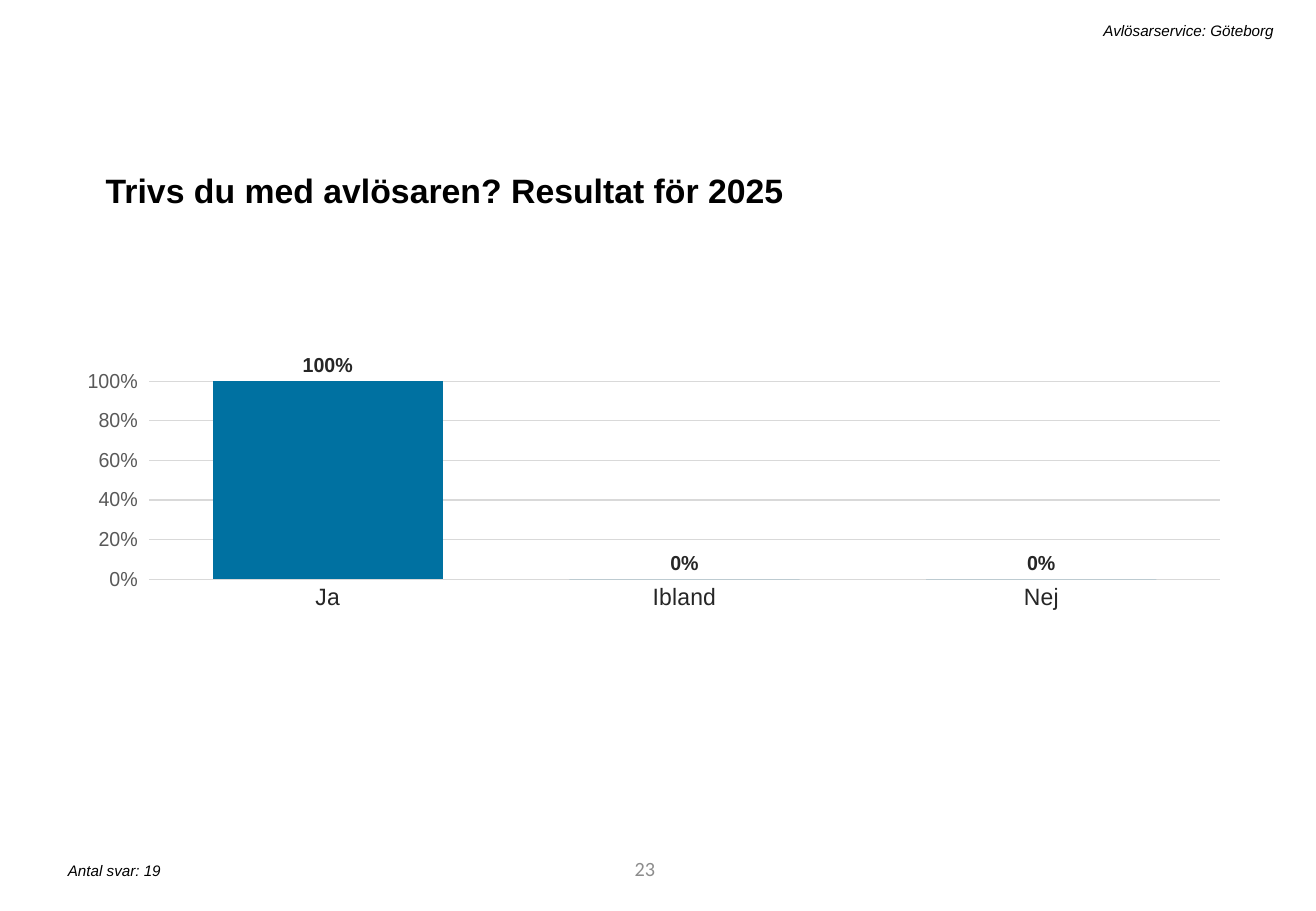
from dataclasses import dataclass

from lxml import etree
from pptx import Presentation
from pptx.chart.data import CategoryChartData
from pptx.dml.color import RGBColor
from pptx.enum.chart import XL_CHART_TYPE, XL_LABEL_POSITION, XL_TICK_MARK
from pptx.enum.text import MSO_ANCHOR, PP_ALIGN
from pptx.oxml.ns import qn
from pptx.util import Pt

COLUMNS = XL_CHART_TYPE.COLUMN_CLUSTERED
OUTSIDE_END = XL_LABEL_POSITION.OUTSIDE_END
TICK_NONE, TICK_OUT = XL_TICK_MARK.NONE, XL_TICK_MARK.OUTSIDE
TOP, MIDDLE = MSO_ANCHOR.TOP, MSO_ANCHOR.MIDDLE
LEFT, RIGHT = PP_ALIGN.LEFT, PP_ALIGN.RIGHT
EMU_PER_PX = 9144


@dataclass(frozen=True)
class Theme:
    font: str = "Arial"
    number_font: str = "Calibri"
    black: str = "000000"
    dark: str = "262626"
    axis: str = "595959"
    muted: str = "8C8C8C"
    grid: str = "D9D9D9"
    bar: str = "0071A1"
    title: int = 20
    category: int = 14
    label: int = 12
    chart: int = 10
    note: int = 9


theme = Theme()


def set_font(font, size, color, name=theme.font, bold=False, italic=False):
    font.name = name
    font.size = Pt(size)
    font.color.rgb = RGBColor.from_string(color)
    font.bold = bold
    font.italic = italic


def add_text(slide, box, text, align=LEFT, anchor=TOP, **font):
    frame = slide.shapes.add_textbox(*[v * EMU_PER_PX for v in box]).text_frame
    frame.word_wrap = True
    frame.vertical_anchor = anchor
    frame.text = text
    paragraph = frame.paragraphs[0]
    paragraph.alignment = align
    set_font(paragraph.runs[0].font, **font)
    return frame


prs = Presentation()
prs.slide_width = 1083 * EMU_PER_PX
prs.slide_height = 750 * EMU_PER_PX
slide = prs.slides.add_slide(prs.slide_layouts[6])

add_text(slide, (305, 695, 244, 40), "23", RIGHT, MIDDLE,
         size=theme.label, color=theme.muted, name=theme.number_font)

title = add_text(slide, (69, 128, 940, 47), "Trivs du med avlösaren? Resultat för 2025",
                 size=theme.title, color=theme.black, bold=True)
title.margin_left = 18 * EMU_PER_PX
title.paragraphs[0].line_spacing = 1.2
title.paragraphs[0].space_before = Pt(10)

for box, note, align in [
    ((46, 704, 441, 25), "Antal svar: 19", LEFT),
    ((172, 13, 886, 25), "Avlösarservice: Göteborg", RIGHT),
]:
    add_text(slide, box, note, align, size=theme.note, color=theme.black, italic=True)

answers = CategoryChartData(number_format="0%")
answers.categories = ["Ja", "Ibland", "Nej"]
answers.add_series("Series 1", [1, 0, 0])
chart_box = [v * EMU_PER_PX for v in (72, 253, 940, 395)]
chart = slide.shapes.add_chart(COLUMNS, *chart_box, answers).chart
chart.has_legend = False
chart.has_title = False
set_font(chart.font, theme.chart, theme.black)

answer_axis = chart.category_axis
answer_axis.major_tick_mark = TICK_NONE
answer_axis.minor_tick_mark = TICK_NONE
set_font(answer_axis.tick_labels.font, theme.category, theme.dark)

share_axis = chart.value_axis
share_axis.minimum_scale = 0
share_axis.maximum_scale = 1
share_axis.major_unit = 0.2
share_axis.major_tick_mark = TICK_OUT
share_axis.minor_tick_mark = TICK_NONE
share_axis.format.line.fill.background()
share_axis.tick_labels.number_format = "0%"
share_axis.tick_labels.number_format_is_linked = False
set_font(share_axis.tick_labels.font, theme.label, theme.axis)

for line in (answer_axis.format.line, share_axis.major_gridlines.format.line):
    line.color.rgb = RGBColor.from_string(theme.grid)
    line.width = Pt(0.75)

plot = chart.plots[0]
plot.gap_width = 55
plot.vary_by_categories = False
shares = plot.series[0]
shares.format.fill.solid()
shares.format.fill.fore_color.rgb = RGBColor.from_string(theme.bar)
labels = shares.data_labels
labels.show_value = True
labels.position = OUTSIDE_END
labels.number_format = "0%"
labels.number_format_is_linked = False
set_font(labels.font, theme.label, theme.dark, bold=True)

plot_area = chart.element.find(".//" + qn("c:plotArea"))
layout = plot_area.find(qn("c:layout"))
if layout is None:
    layout = etree.Element(qn("c:layout"))
    plot_area.insert(0, layout)
manual = etree.SubElement(layout, qn("c:manualLayout"))
for tag, value in [
    ("layoutTarget", "inner"), ("xMode", "edge"), ("yMode", "edge"),
    ("x", "0.025"), ("y", "0.154"), ("w", "0.966"), ("h", "0.413"),
]:
    etree.SubElement(manual, qn("c:" + tag)).set("val", value)

prs.save("out.pptx")
